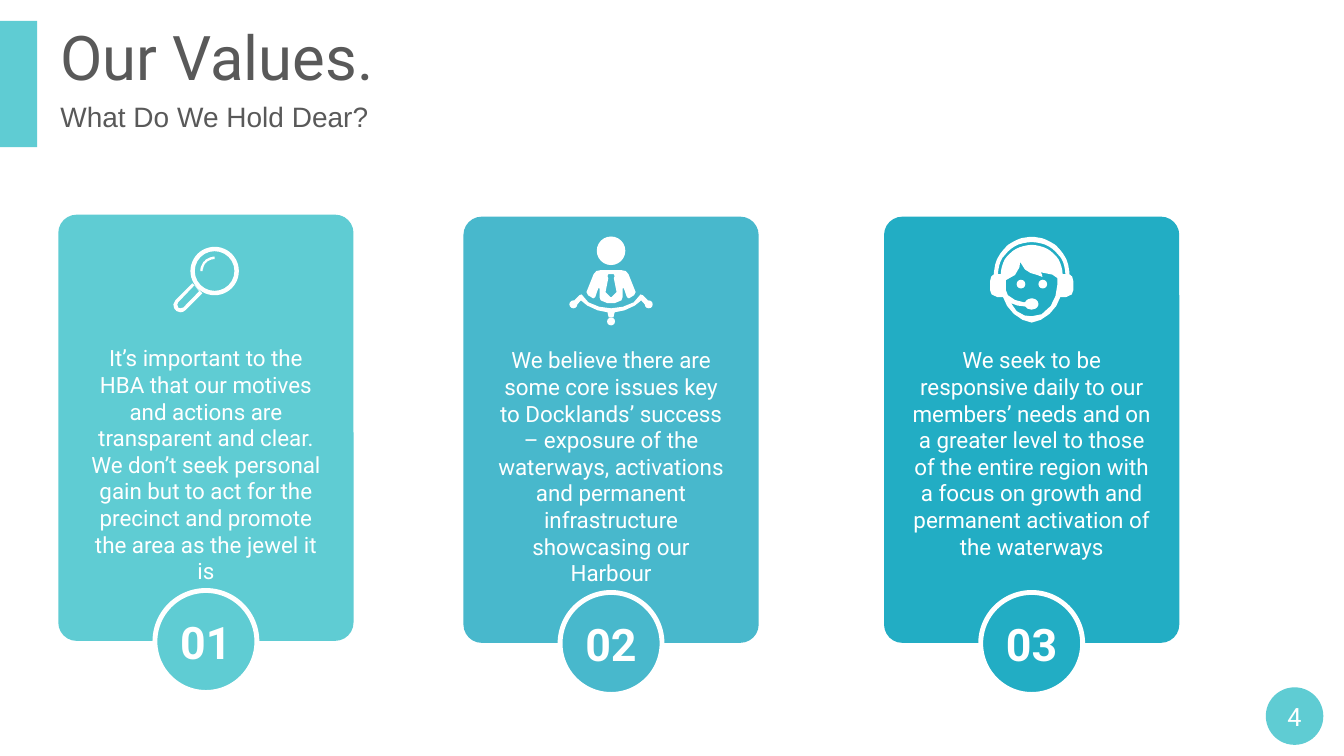
import math

import pptx
import pptx.dml.color
import pptx.enum.shapes
import pptx.enum.text
import pptx.util

Cm = pptx.util.Cm
Pt = pptx.util.Pt
RGBColor = pptx.dml.color.RGBColor
MSO_SHAPE = pptx.enum.shapes.MSO_SHAPE
PP_ALIGN = pptx.enum.text.PP_ALIGN
MSO_ANCHOR = pptx.enum.text.MSO_ANCHOR

AQUA = RGBColor(0x5F, 0xCC, 0xD3)
SKY = RGBColor(0x48, 0xB8, 0xCC)
TEAL = RGBColor(0x22, 0xAD, 0xC4)
WHITE = RGBColor(0xFF, 0xFF, 0xFF)
GREY = RGBColor(0x59, 0x59, 0x59)

CARD_WIDTH, CARD_HEIGHT = Cm(7.44), Cm(10.74)
BADGE_SIZE = Cm(2.57)
ICON_UNIT = Cm(0.01)


def add_filled(slide, kind, left, top, width, height, color):
    shape = slide.shapes.add_shape(kind, left, top, width, height)
    return paint(shape, color)


def paint(shape, color):
    shape.shadow.inherit = False
    shape.fill.solid()
    shape.fill.fore_color.rgb = color
    shape.line.fill.background()
    return shape


def write(shape, text, size, color, font="Roboto", bold=False,
          align=PP_ALIGN.CENTER, anchor=MSO_ANCHOR.MIDDLE):
    """Fill the shape with one run, without insets, and return its paragraph."""
    frame = shape.text_frame
    frame.word_wrap = True
    frame.auto_size = pptx.enum.text.MSO_AUTO_SIZE.NONE
    frame.vertical_anchor = anchor
    frame.margin_left = frame.margin_right = 0
    frame.margin_top = frame.margin_bottom = 0
    paragraph = frame.paragraphs[0]
    paragraph.alignment = align
    run = paragraph.add_run()
    run.text = text
    run.font.name = font
    run.font.size = Pt(size)
    run.font.bold = bold
    run.font.color.rgb = color
    return paragraph


# Icon points are in ICON_UNIT, measured from the middle of the card's top edge.

def arc(center_x, center_y, radius_x, radius_y, start, end, steps=24):
    angles = [math.radians(start + (end - start) * i / steps) for i in range(steps + 1)]
    return [(center_x + radius_x * math.cos(a), center_y + radius_y * math.sin(a))
            for a in angles]


def mirrored(right_half):
    return right_half + [(-x, y) for x, y in reversed(right_half)]


def add_outline(slide, origin, *contours):
    """Draw white contours as one shape; inner contours become holes."""
    builder = slide.shapes.build_freeform(*contours[0][0], scale=ICON_UNIT)
    builder.add_line_segments(contours[0][1:], close=True)
    for contour in contours[1:]:
        builder.move_to(*contour[0])
        builder.add_line_segments(contour[1:], close=True)
    paint(builder.convert_to_shape(*origin), WHITE)


def add_disc(slide, origin, x, y, radius, kind=MSO_SHAPE.OVAL):
    size = 2 * radius * ICON_UNIT
    return add_filled(slide, kind, origin[0] + (x - radius) * ICON_UNIT,
                      origin[1] + (y - radius) * ICON_UNIT, size, size, WHITE)


def draw_magnifier(slide, origin):
    lens = add_disc(slide, origin, 22, 142, 61, MSO_SHAPE.DONUT)
    lens.adjustments[0] = 0.09
    handle = [(-34, 173), (-77, 216), (-82, 226), (-80, 236), (-74, 243),
              (-65, 246), (-58, 245), (-52, 241), (-9, 198)]
    handle_hole = [(-29, 178), (-70, 221), (-72, 226), (-70, 234),
                   (-65, 236), (-57, 234), (-17, 193)]
    add_outline(slide, origin, handle, handle_hole)
    add_outline(slide, origin, arc(22, 142, 36, 36, 180, 270) + arc(22, 142, 30, 30, 270, 180))


def draw_helmsman(slide, origin):
    add_disc(slide, origin, 0, 86, 36)
    jacket = [(27, 135), (37, 137), (44, 145), (62, 190), (58, 198), (45, 206),
              (40, 203), (32, 180), (29, 181), (29, 203), (26, 211), (9, 218)]
    tie = [(7, 145), (9, 150), (7, 155), (14, 190), (1, 203)]
    add_outline(slide, origin, mirrored(jacket), mirrored(tie))
    wheel = [(0, 231), (30, 227), (57, 216), (70, 201), (74, 196), (80, 198),
             (93, 211), (85, 221), (76, 211), (60, 224), (34, 236), (9, 241), (6, 254)]
    add_outline(slide, origin, mirrored(wheel))
    for x, y in [(-95, 221), (95, 221), (0, 264)]:
        add_disc(slide, origin, x, y, 10)


def draw_headset(slide, origin):
    head = arc(0, 145, 95, 94, 270, 360) + [
        (102, 151), (105, 163), (105, 185), (101, 196), (86, 203), (72, 203),
        (62, 225), (45, 245), (23, 260), (0, 267)]
    band_gap = arc(0, 145, 85, 81, 180, 360) + arc(0, 145, 78, 74, 360, 180)
    fringe = [(65, 170), (65, 155), (52, 146), (22, 140), (26, 145), (27, 152),
              (14, 147), (-3, 142), (-17, 133), (-24, 122), (-29, 114), (-31, 128),
              (-42, 147), (-65, 160), (-65, 170), (-65, 185), (-60, 198)]
    microphone = [(-42, 210), (-19, 216)] + arc(0, 220, 17, 14, 200, 510) + [
        (-19, 226), (-36, 224), (-52, 218)]
    chin = [(-38, 238), (-18, 249), (0, 251), (25, 246), (48, 225), (60, 200)]
    add_outline(slide, origin, mirrored(head), band_gap, fringe + microphone + chin)
    for x in (-27, 28):
        add_disc(slide, origin, x, 170, 11)


def add_heading(slide, left, top, width):
    add_filled(slide, MSO_SHAPE.RECTANGLE, 0, Cm(0.53), Cm(0.94), Cm(3.18), AQUA)

    headline = slide.placeholders[1]
    headline.left, headline.top, headline.width, headline.height = left, top, width, Cm(1.52)
    paragraph = write(headline, "Our Values.", 44, GREY, align=PP_ALIGN.LEFT)
    paragraph.line_spacing = 0.9
    paragraph.space_before = Pt(10)

    question = slide.shapes.title
    question.left, question.top = left, top + Cm(1.5)
    question.width, question.height = width, Cm(1.32)
    paragraph = write(question, "What Do We Hold Dear?", 20, GREY, "Arial", align=PP_ALIGN.LEFT)
    paragraph.runs[0].font._element.set("cap", "none")


def add_value_card(slide, left, top, color, number, statement, draw_icon):
    card = add_filled(slide, MSO_SHAPE.ROUNDED_RECTANGLE, left, top,
                      CARD_WIDTH, CARD_HEIGHT, color)
    card.adjustments[0] = 0.062

    badge = add_filled(slide, MSO_SHAPE.OVAL, left + (CARD_WIDTH - BADGE_SIZE) // 2,
                       top + Cm(9.47), BADGE_SIZE, BADGE_SIZE, color)
    badge.line.color.rgb = WHITE
    badge.line.width = Pt(3.5)
    write(badge, number, 32, WHITE, bold=True)

    body = slide.shapes.add_textbox(left + Cm(0.71), top + Cm(3.28), Cm(6.02), Cm(6.1))
    write(body, statement, 16, WHITE, anchor=MSO_ANCHOR.TOP).line_spacing = Pt(19)

    draw_icon(slide, (left + CARD_WIDTH // 2, top))


def add_page_number(slide, left, top, number):
    badge = add_filled(slide, MSO_SHAPE.OVAL, left, top, Cm(1.45), Cm(1.45), AQUA)
    write(badge, number, 18, WHITE)


def main():
    deck = pptx.Presentation()
    deck.slide_width, deck.slide_height = Cm(33.87), Cm(19.05)
    slide = deck.slides.add_slide(deck.slide_layouts[2])

    add_page_number(slide, Cm(31.9), Cm(17.32), "4")
    add_heading(slide, Cm(1.52), Cm(0.76), Cm(31.47))

    values = [
        (1.47, 5.41, AQUA, "It’s important to the HBA that our motives and actions are "
         "transparent and clear. We don’t seek personal gain but to act for the precinct "
         "and promote the area as the jewel it is", draw_magnifier),
        (11.68, 5.46, SKY, "We believe there are some core issues key to Docklands’ success "
         "– exposure of the waterways, activations and permanent infrastructure "
         "showcasing our Harbour", draw_helmsman),
        (22.28, 5.46, TEAL, "We seek to be responsive daily to our members’ needs and on a "
         "greater level to those of the entire region with a focus on growth and "
         "permanent activation of the waterways", draw_headset),
    ]
    for position, (left, top, color, statement, draw_icon) in enumerate(values, start=1):
        add_value_card(slide, Cm(left), Cm(top), color, f"{position:02}", statement, draw_icon)

    deck.save("out.pptx")


if __name__ == "__main__":
    main()
